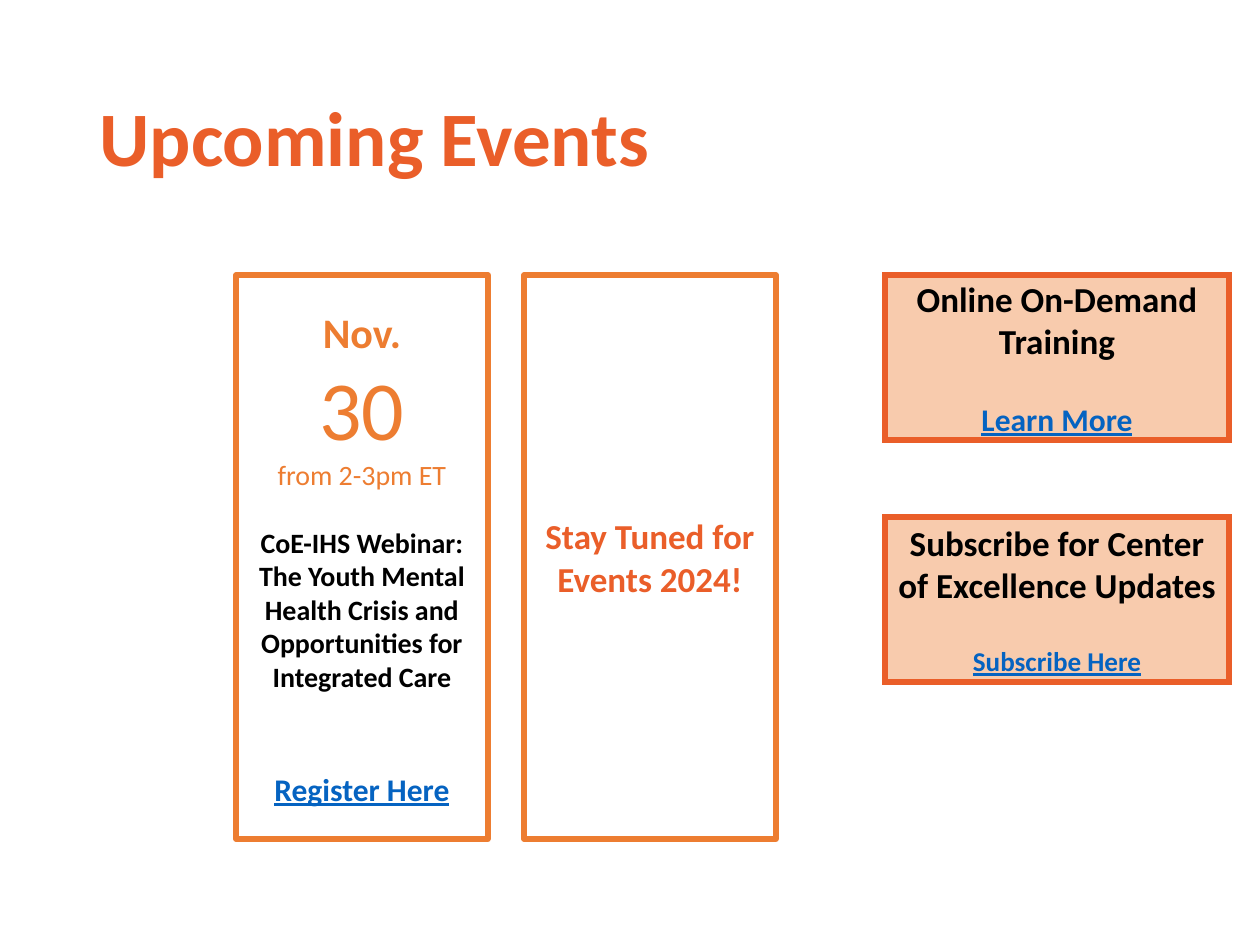
from dataclasses import dataclass

from lxml import etree
from pptx import Presentation
from pptx.dml.color import RGBColor
from pptx.enum.shapes import MSO_SHAPE
from pptx.enum.text import MSO_ANCHOR, PP_ALIGN
from pptx.oxml.ns import qn
from pptx.util import Emu, Pt

RECTANGLE = MSO_SHAPE.RECTANGLE
MIDDLE = MSO_ANCHOR.MIDDLE
CENTER, LEFT = PP_ALIGN.CENTER, PP_ALIGN.LEFT
TITLE_ONLY = 5
PX = 914400 / 126
FONT = "Calibri"
COLORS = {
    "accent": "EA5E29",
    "orange": "ED7D31",
    "peach": "F8CBAD",
    "black": "000000",
    "link": "0563C1",
}


@dataclass(frozen=True)
class Line:
    text: str
    size: float
    color: str = "black"
    bold: bool = True
    underline: bool = False
    gap: float = 0


@dataclass(frozen=True)
class Card:
    left: int
    top: int
    width: int
    height: int
    border: str
    lines: tuple[Line, ...]
    fill: str | None = None
    join: str = "round"


def px(value: int) -> Emu:
    return Emu(round(value * PX))


def rgb(name: str) -> RGBColor:
    return RGBColor.from_string(COLORS[name])


def place(shape, left: int, top: int, width: int, height: int) -> None:
    lengths = {"left": left, "top": top, "width": width, "height": height}
    for name, value in lengths.items():
        setattr(shape, name, px(value))


def write_line(para, line: Line, alignment: PP_ALIGN) -> None:
    para.alignment = alignment
    para.space_before = Pt(line.gap)
    span = para.add_run()
    span.text = line.text
    formats = {
        "name": FONT,
        "size": Pt(line.size),
        "bold": line.bold,
        "underline": line.underline,
    }
    for name, value in formats.items():
        setattr(span.font, name, value)
    span.font.color.rgb = rgb(line.color)


def draw_card(page, card: Card) -> None:
    box = page.shapes.add_shape(RECTANGLE, 0, 0, 0, 0)
    place(box, card.left, card.top, card.width, card.height)
    box.shadow.inherit = False
    if card.fill:
        box.fill.solid()
        box.fill.fore_color.rgb = rgb(card.fill)
    else:
        box.fill.background()
    box.line.color.rgb = rgb(card.border)
    box.line.width = Pt(3)
    outline = box.element.spPr.find(qn("a:ln"))
    etree.SubElement(outline, qn(f"a:{card.join}"))

    frame = box.text_frame
    frame.word_wrap = True
    frame.vertical_anchor = MIDDLE
    for index, line in enumerate(card.lines):
        para = frame.add_paragraph() if index else frame.paragraphs[0]
        write_line(para, line, CENTER)


def draw_title(page) -> None:
    title = page.shapes.title
    place(title, 87, 50, 1086, 183)
    title.text_frame.vertical_anchor = MIDDLE
    para = title.text_frame.paragraphs[0]
    para.line_spacing = 0.9
    write_line(para, Line("Upcoming Events", 44, "accent"), LEFT)


def event_card(left: int, *lines: Line) -> Card:
    return Card(left, 275, 252, 564, "orange", lines)


def resource_card(top: int, heading: str, link: str, link_size: float) -> Card:
    lines = (
        Line(heading, 20),
        Line(link, link_size, "link", underline=True, gap=22),
    )
    return Card(885, top, 344, 165, "accent", lines, "peach", "miter")


CARDS = (
    event_card(524, Line("Stay Tuned for Events 2024!", 20, "accent")),
    resource_card(275, "Online On-Demand Training", "Learn More", 18),
    resource_card(517, "Subscribe for Center of Excellence Updates", "Subscribe Here", 15.5),
    event_card(
        236,
        Line("Nov.", 24, "orange"),
        Line("30", 48, "orange", bold=False),
        Line("from 2-3pm ET", 16, "orange", bold=False),
        Line(
            "CoE-IHS Webinar: The Youth Mental Health Crisis and "
            "Opportunities for Integrated Care",
            16,
            gap=19.5,
        ),
        Line("Register Here", 18, "link", underline=True, gap=44),
    ),
)


def main() -> None:
    deck = Presentation()
    deck.slide_width, deck.slide_height = px(1260), px(945)
    page = deck.slides.add_slide(deck.slide_layouts[TITLE_ONLY])
    draw_title(page)
    for card in CARDS:
        draw_card(page, card)
    deck.save("out.pptx")


if __name__ == "__main__":
    main()
